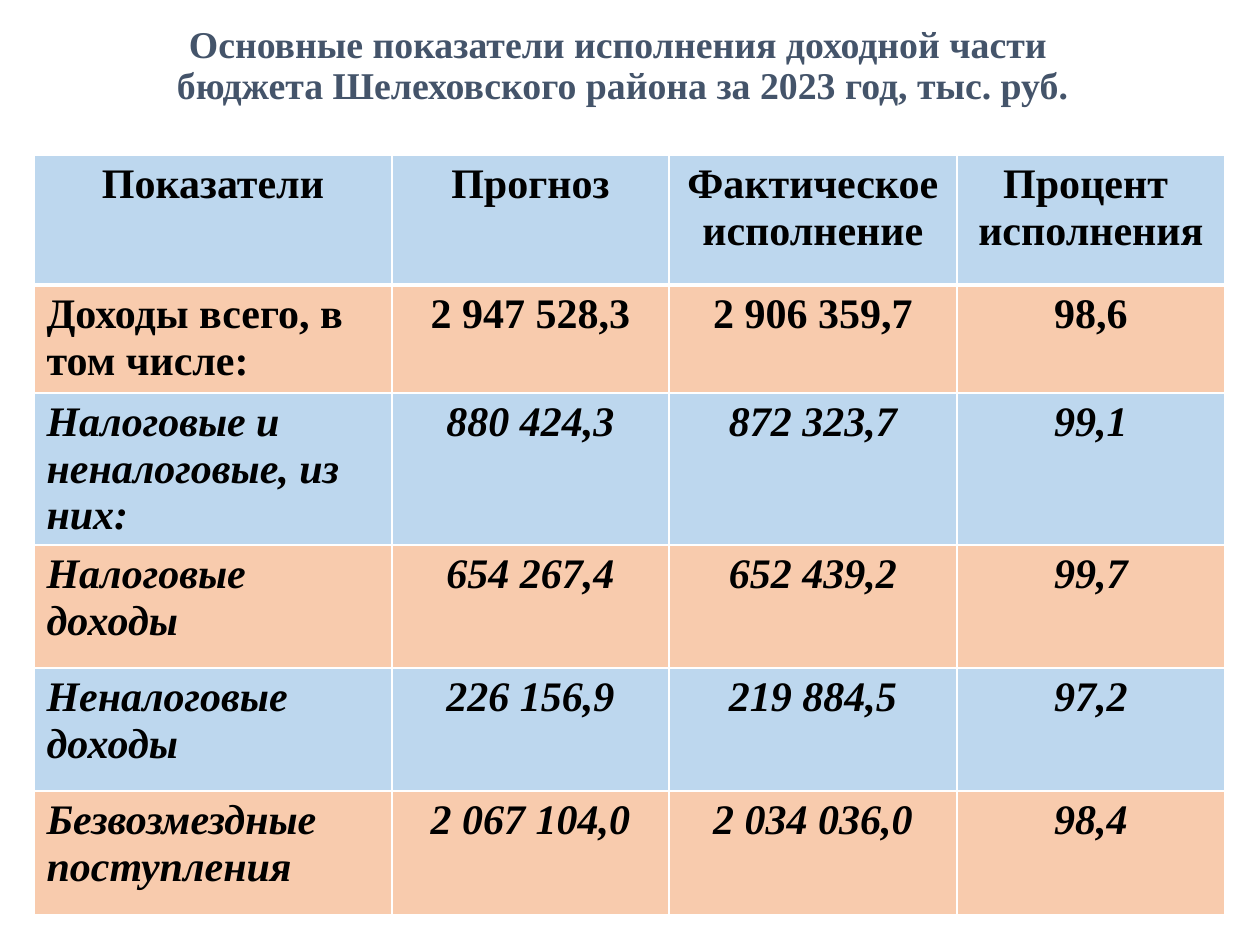
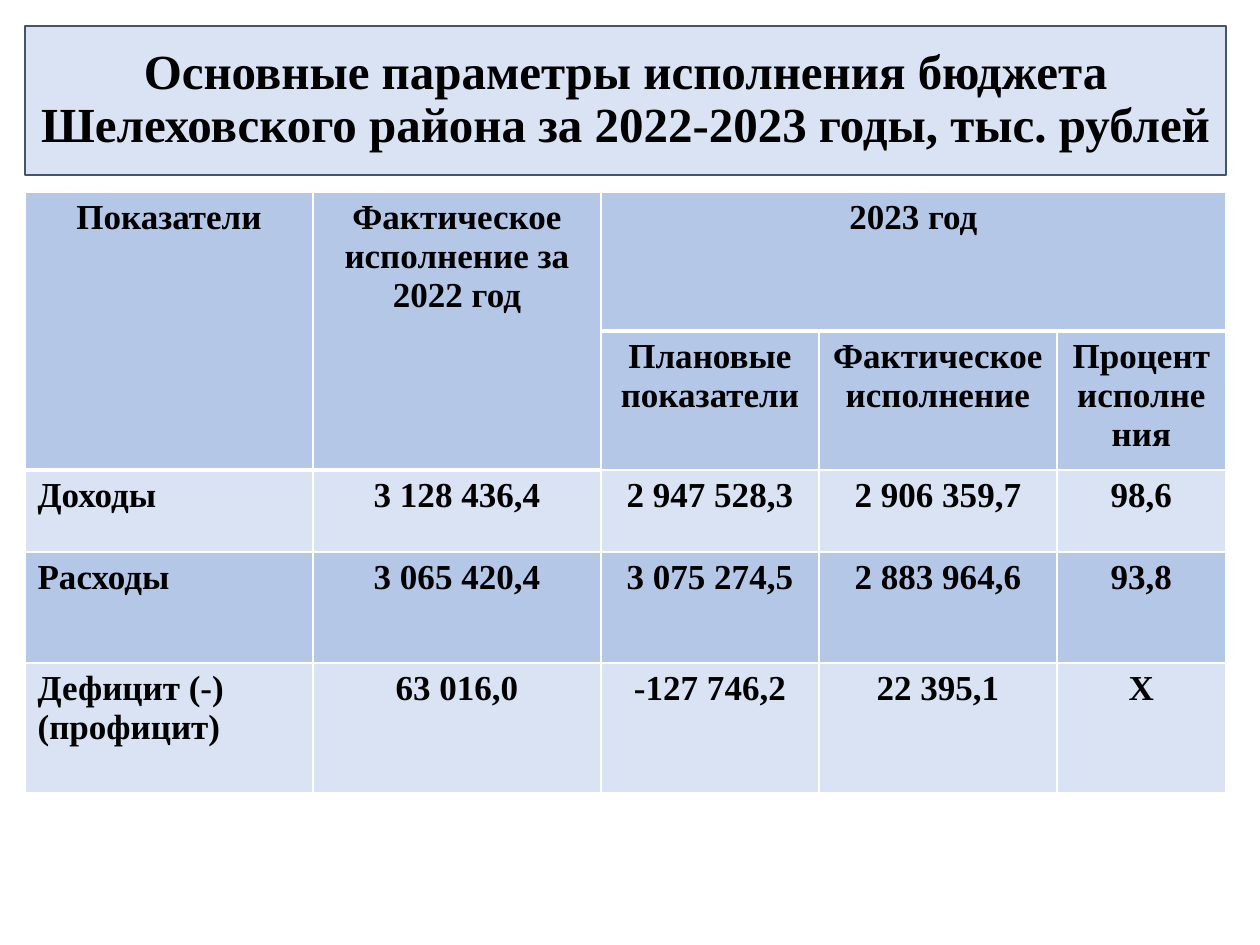
from copy import deepcopy

from lxml.etree import SubElement
from pptx import Presentation
from pptx.dml.color import RGBColor
from pptx.enum.text import MSO_ANCHOR, MSO_AUTO_SIZE, PP_ALIGN
from pptx.oxml.ns import qn
from pptx.util import Emu, Pt

FONT = "Times New Roman"
COLORS = {
    "black": "000000", "white": "FFFFFF", "slate": "44546A",
    "sky": "BDD7EE", "peach": "F8CBAD", "blue": "B4C7E7", "pale": "DAE3F3",
}


def px(num):
    """Turn pixels (126 to the inch) into EMU."""
    return Emu(round(num * 914400 / 126))


def color(name):
    return RGBColor.from_string(COLORS[name])


def write(frame, text, size, ink="black", italic=False,
          align=PP_ALIGN.CENTER, spacing=None):
    """Fill a text frame: \\n starts a paragraph, \\v breaks a line."""
    frame.text = text
    for para in frame.paragraphs:
        para.alignment = align
        if spacing:
            para.line_spacing = spacing
        for run in para.runs:
            font = run.font
            font.name, font.size = FONT, Pt(size)
            font.bold, font.italic = True, italic
            font.color.rgb = color(ink)
        for gap in para._p.findall(qn("a:br")):
            gap.append(deepcopy(para.runs[0]._r.rPr))


def border(cell, side, width):
    """Draw one white edge of a table cell."""
    props = cell._tc.get_or_add_tcPr()
    line = SubElement(props, qn(f"a:ln{side}"), w=str(Pt(width)))
    fill = SubElement(line, qn("a:solidFill"))
    SubElement(fill, qn("a:srgbClr"), val=COLORS["white"])


class Deck:
    def __init__(self):
        self.prs = Presentation()
        self.prs.slide_width, self.prs.slide_height = px(1260), px(945)
        self.slide = None

    def add(self):
        self.slide = self.prs.slides.add_slide(self.prs.slide_layouts[5])

    def title(self, text, box, size, ink="black", fill=None):
        shape = self.slide.shapes.title
        shape.left, shape.top, shape.width, shape.height = map(px, box)
        if fill:
            shape.fill.solid()
            shape.fill.fore_color.rgb = color(fill)
            shape.line.color.rgb = color("slate")
            shape.line.width = Pt(0.75)
        frame = shape.text_frame
        frame.word_wrap = True
        frame.auto_size = MSO_AUTO_SIZE.NONE
        frame.vertical_anchor = MSO_ANCHOR.MIDDLE
        write(frame, text, size, ink, spacing=0.9)

    def table(self, data, spot, cols, rows, fills, size, heads=1,
              slant=None, spans=()):
        """Place a table; rows from index slant on are italic."""
        table = self.slide.shapes.add_table(
            len(rows), len(cols), *map(px, (*spot, sum(cols), sum(rows)))
        ).table
        for col, width in zip(table.columns, cols):
            col.width = px(width)
        for row, height in zip(table.rows, rows):
            row.height = px(height)
        for start, end in spans:
            table.cell(*start).merge(table.cell(*end))
        for r, line in enumerate(data):
            for c, text in enumerate(line):
                cell = table.cell(r, c)
                if r == 0:
                    for side, width in zip("LRTB", (1, 1, 1, 3)):
                        border(cell, side, width)
                cell.fill.solid()
                cell.fill.fore_color.rgb = color(fills[r])
                if text is None:
                    continue
                label = c == 0 and r >= heads
                write(cell.text_frame, text, size,
                      italic=slant is not None and r >= slant,
                      align=PP_ALIGN.LEFT if label else PP_ALIGN.CENTER)


def income(deck):
    deck.add()
    deck.title("Основные показатели исполнения доходной части\v"
               " бюджета Шелеховского района за 2023 год, тыс. руб.",
               (54, 17, 1128, 100), 21.6, ink="slate")
    data = [
        ("Показатели", "Прогноз", "Фактическое\nисполнение",
         "Процент \nисполнения"),
        ("Доходы всего, в том числе:", "2 947 528,3", "2 906 359,7", "98,6"),
        ("Налоговые и неналоговые, из них:", "880 424,3", "872 323,7", "99,1"),
        ("Налоговые доходы", "654 267,4", "652 439,2", "99,7"),
        ("Неналоговые\nдоходы", "226 156,9", "219 884,5", "97,2"),
        ("Безвозмездные\nпоступления", "2 067 104,0", "2 034 036,0", "98,4"),
    ]
    deck.table(data, (34, 155), (358, 277, 288, 268),
               (130, 108, 123, 123, 123, 124), ("sky", "peach") * 3,
               24, slant=2)


def budget(deck):
    deck.add()
    deck.title("Основные параметры исполнения бюджета Шелеховского района "
               "за 2022-2023 годы, тыс. рублей",
               (25, 26, 1201, 149), 28, fill="pale")
    data = [
        ("Показатели", "Фактическое исполнение за 2022 год", "2023 год",
         None, None),
        (None, None, "Плановые показатели", "Фактическое\nисполнение",
         "Процент \nисполнения"),
        ("Доходы", "3 128 436,4", "2 947 528,3", "2 906 359,7", "98,6"),
        ("Расходы", "3 065 420,4", "3 075 274,5", "2 883 964,6", "93,8"),
        ("Дефицит (-)\n(профицит)", "63 016,0", "-127 746,2", "22 395,1", "Х"),
    ]
    deck.table(data, (25, 192), (288, 288, 218, 238, 169),
               (139, 139, 82, 111, 130),
               ("blue", "blue", "pale", "blue", "pale"), 20, heads=2,
               spans=(((0, 0), (1, 0)), ((0, 1), (1, 1)), ((0, 2), (0, 4))))


def main():
    deck = Deck()
    income(deck)
    budget(deck)
    deck.prs.save("out.pptx")


if __name__ == "__main__":
    main()
